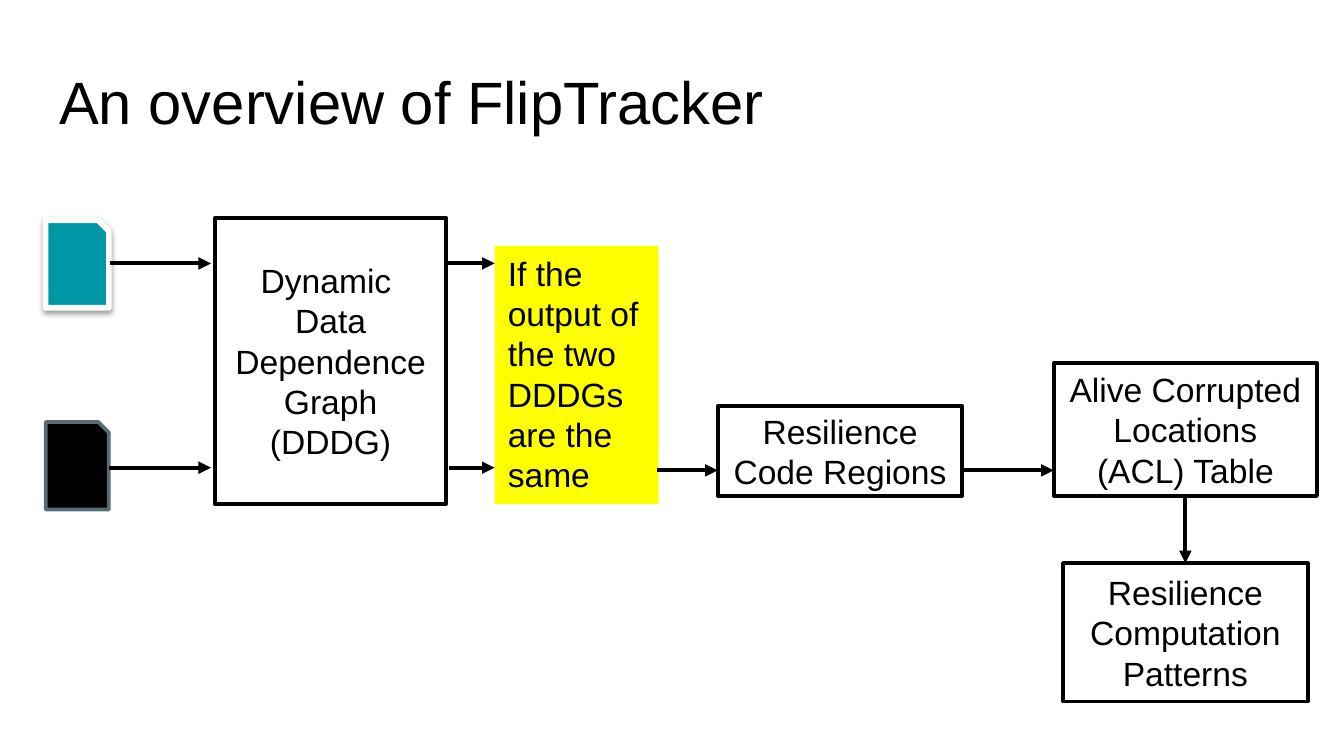
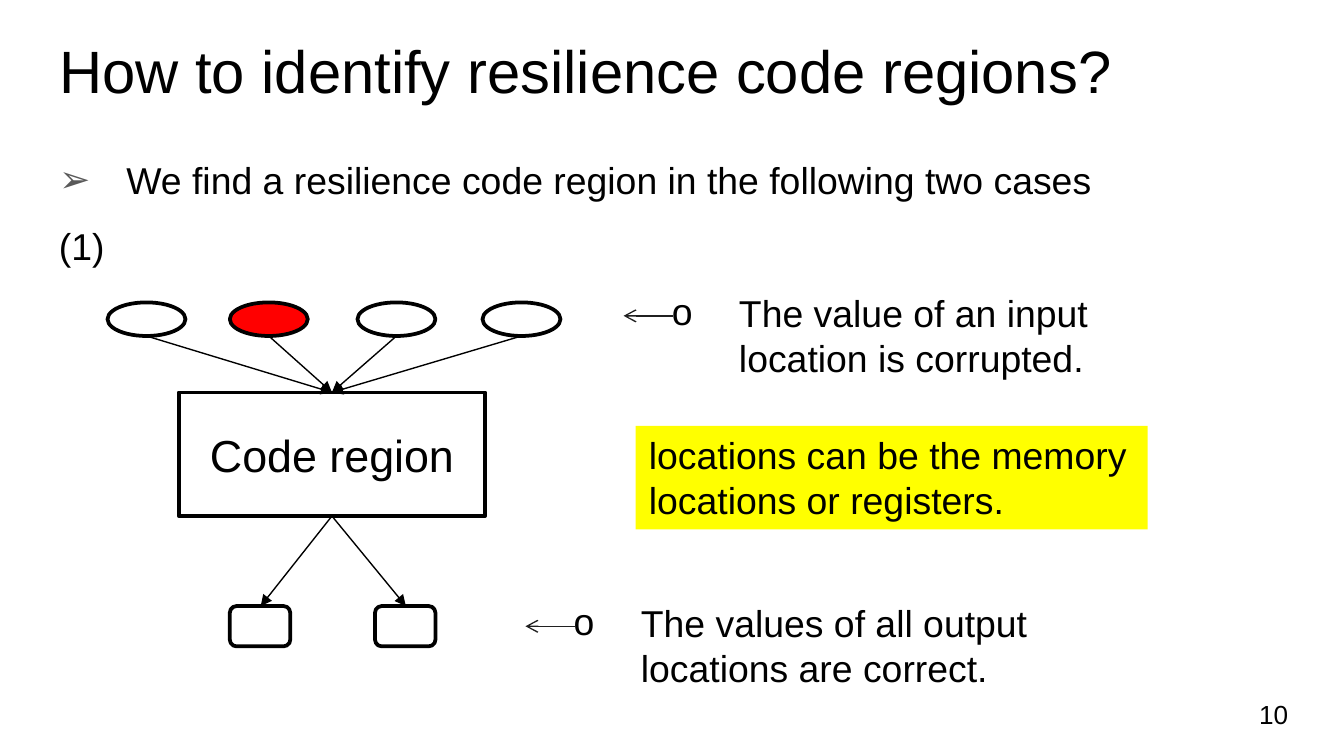
from dataclasses import dataclass

from lxml.etree import SubElement
from pptx import Presentation
from pptx.dml.color import RGBColor
from pptx.enum.shapes import MSO_CONNECTOR as Connector, MSO_SHAPE as Shape
from pptx.enum.text import MSO_ANCHOR as Anchor, MSO_AUTO_SIZE as AutoSize, PP_ALIGN as Align
from pptx.oxml.ns import qn
from pptx.util import Emu, Pt

SCALE = 9144


@dataclass(frozen=True)
class Theme:
    """Colours, font, type sizes and line widths of the deck."""
    font: str = "Arial"
    ink: str = "000000"
    paper: str = "FFFFFF"
    highlight: str = "FFFF00"
    corrupted: str = "FF0000"
    teal: str = "0097A7"
    slate: str = "596B73"
    bullet: str = "595959"
    pointer: str = "202020"
    title: int = 32
    region: int = 24
    body: int = 20
    flow: int = 18
    number: int = 14
    border: float = 2
    flow_arrow: float = 2.25
    thin_arrow: float = 0.75


@dataclass(frozen=True)
class Box:
    """A rectangle in px."""
    x: int
    y: int
    w: int
    h: int

    def inner(self, x, y, w, h):
        """Return a box placed relative to this one."""
        return Box(self.x + x, self.y + y, w, h)

    def emu(self):
        """Return left, top, width and height in EMU."""
        return [px(v) for v in (self.x, self.y, self.w, self.h)]


THEME = Theme()


def px(value):
    """Turn px into EMU."""
    return Emu(value * SCALE)


def rgb(colour):
    """Turn a hex string into a colour."""
    return RGBColor.from_string(colour)


def write(holder, text, size, align=Align.LEFT, anchor=Anchor.TOP,
          inset=(10, 5), wrap=True, fit=AutoSize.NONE):
    """Put text into a holder and format it."""
    frame = holder.text_frame
    frame.text = text
    frame.word_wrap = wrap
    frame.auto_size = fit
    frame.vertical_anchor = anchor
    frame.margin_left = frame.margin_right = px(inset[0])
    frame.margin_top = frame.margin_bottom = px(inset[1])
    for paragraph in frame.paragraphs:
        paragraph.alignment = align
        paragraph.space_before = Pt(0)
        for run in paragraph.runs:
            run.font.name = THEME.font
            run.font.size = Pt(size)
            run.font.color.rgb = rgb(THEME.ink)


def place(holder, box):
    """Move a placeholder to a box."""
    holder.left, holder.top, holder.width, holder.height = box.emu()


def add_bullet(paragraph, mark, colour=None):
    """Give a paragraph a hanging bullet."""
    props = paragraph._p.get_or_add_pPr()
    props.set("marL", str(px(50)))
    props.set("indent", str(px(-50)))
    if colour:
        SubElement(SubElement(props, qn("a:buClr")), qn("a:srgbClr"), val=colour)
    SubElement(props, qn("a:buFont"), typeface=THEME.font)
    SubElement(props, qn("a:buChar"), char=mark)


def add_figure(slide, kind, box, fill=None, line=THEME.ink, width=THEME.border):
    """Add a preset shape without shadow."""
    figure = slide.shapes.add_shape(kind, *box.emu())
    figure.shadow.inherit = False
    if fill:
        figure.fill.solid()
        figure.fill.fore_color.rgb = rgb(fill)
    else:
        figure.fill.background()
    if line:
        figure.line.color.rgb = rgb(line)
        figure.line.width = Pt(width)
    else:
        figure.line.fill.background()
    return figure


def add_step(slide, box, text, size=THEME.flow, fill=None):
    """Add a bordered box with centred text."""
    step = add_figure(slide, Shape.RECTANGLE, box, fill)
    write(step, text, size, Align.CENTER, Anchor.MIDDLE)


def add_highlight(slide, box, text, size):
    """Add a yellow remark."""
    remark = add_figure(slide, Shape.RECTANGLE, box, THEME.highlight, None)
    write(remark, text, size, fit=AutoSize.SHAPE_TO_FIT_TEXT)


def add_label(slide, box, text, size, **style):
    """Add a text box."""
    label = slide.shapes.add_textbox(*box.emu())
    write(label, text, size, **style)
    return label


def add_arrow(slide, box, start, end, width, colour=THEME.ink, head="triangle"):
    """Add an arrow between two points relative to a box."""
    ends = [px(v) for x, y in (start, end) for v in (box.x + x, box.y + y)]
    arrow = slide.shapes.add_connector(Connector.STRAIGHT, *ends)
    arrow.line.color.rgb = rgb(colour)
    arrow.line.width = Pt(width)
    SubElement(arrow.line._get_or_add_ln(), qn("a:tailEnd"), type=head)
    SubElement(arrow._element.spPr, qn("a:effectLst"))


def add_soft_shadow(figure):
    """Give a shape a soft shadow below it."""
    effects = figure._element.spPr.find(qn("a:effectLst"))
    shadow = SubElement(effects, qn("a:outerShdw"), blurRad=str(Pt(3.1)),
                        dist=str(Pt(1.6)), dir="5400000", rotWithShape="0")
    tint = SubElement(shadow, qn("a:srgbClr"), val=THEME.ink)
    SubElement(tint, qn("a:alpha"), val="38000")


def add_titled_slide(deck, layout, title, box):
    """Add a slide with its title placed in a box."""
    slide = deck.slides.add_slide(deck.slide_layouts[layout])
    place(slide.shapes.title, box)
    write(slide.shapes.title, title, THEME.title, inset=(10, 10))
    return slide


def draw_pipeline(slide, box):
    """Draw the flow from the two traces to the patterns."""
    add_figure(slide, Shape.SNIP_1_RECTANGLE, box.inner(0, 152, 47, 65),
               THEME.ink, THEME.slate)
    clean_trace = add_figure(slide, Shape.SNIP_1_RECTANGLE, box.inner(0, 2, 47, 65),
                             THEME.teal, THEME.paper, 3)
    add_soft_shadow(clean_trace)
    add_step(slide, box.inner(126, 0, 172, 213),
             "Dynamic \nData\nDependence\nGraph\n(DDDG)", fill=THEME.paper)
    add_highlight(slide, box.inner(334, 21, 122, 192),
                  "If the output of the two DDDGs are the same", THEME.flow)
    steps = (
        ((500, 140, 182, 67), "Resilience Code Regions"),
        ((750, 108, 196, 99), "Alive Corrupted Locations (ACL) Table"),
        ((757, 257, 182, 103), "Resilience Computation Patterns"),
    )
    for area, text in steps:
        add_step(slide, box.inner(*area), text)
    links = (
        ((48, 34), (123, 34)), ((47, 186), (123, 186)),
        ((297, 34), (334, 34)), ((300, 186), (334, 186)),
        ((455, 188), (500, 188)), ((682, 188), (750, 188)),
        ((848, 207), (848, 257)),
    )
    for start, end in links:
        add_arrow(slide, box, start, end, THEME.flow_arrow)


def draw_code_region(slide, box):
    """Draw the code region with its inputs and outputs."""
    hub = 167
    add_step(slide, box.inner(53, 67, 228, 92), "Code region", THEME.region, THEME.paper)
    inputs = ((0, THEME.paper), (91, THEME.corrupted), (186, THEME.paper), (279, THEME.paper))
    for x, fill in inputs:
        add_figure(slide, Shape.OVAL, box.inner(x, 0, 58, 25), fill)
        add_arrow(slide, box, (x + 29, 25), (hub, 67), THEME.thin_arrow)
    for x in (91, 199):
        add_figure(slide, Shape.ROUNDED_RECTANGLE, box.inner(x, 226, 45, 30), THEME.paper)
        add_arrow(slide, box, (hub, 159), (x + 23, 226), THEME.thin_arrow)


def draw_notes(slide, box):
    """Write the conditions on inputs and outputs beside the diagram."""
    notes = (
        ((99, 0, 348, 77), "The value of an input location is corrupted."),
        ((26, 231, 392, 77), "The values of all output locations are correct."),
    )
    for area, text in notes:
        spot = box.inner(*area)
        note = add_label(slide, spot, text, THEME.body, fit=AutoSize.SHAPE_TO_FIT_TEXT)
        add_bullet(note.text_frame.paragraphs[0], "o")
        add_arrow(slide, spot, (11, 24), (-26, 24), THEME.thin_arrow, THEME.pointer, "arrow")
    add_highlight(slide, box.inner(82, 106, 381, 77),
                  "locations can be the memory locations or registers.", THEME.body)


def build_overview(deck):
    """Build the overview slide."""
    slide = add_titled_slide(deck, 5, "An overview of FlipTracker", Box(34, 38, 932, 63))
    draw_pipeline(slide, Box(34, 162, 946, 360))


def build_identification(deck):
    """Build the slide on finding resilience code regions."""
    slide = add_titled_slide(deck, 1, "How to identify resilience code regions?",
                             Box(34, 15, 911, 63))
    lead = slide.placeholders[1]
    place(lead, Box(34, 102, 900, 65))
    write(lead, "We find a resilience code region in the following two cases",
          THEME.body, inset=(10, 10))
    claim = lead.text_frame.paragraphs[0]
    claim.line_spacing = 1.15
    claim.space_after = Pt(16)
    add_bullet(claim, "➢", THEME.bullet)
    add_label(slide, Box(34, 161, 54, 44), "(1)", THEME.body,
              wrap=False, fit=AutoSize.SHAPE_TO_FIT_TEXT)
    draw_code_region(slide, Box(80, 225, 337, 256))
    draw_notes(slide, Box(391, 211, 463, 308))
    add_label(slide, Box(927, 510, 60, 43), "10", THEME.number,
              anchor=Anchor.MIDDLE, inset=(10, 10))


def main():
    """Build and save the deck."""
    deck = Presentation()
    deck.slide_width = px(1000)
    deck.slide_height = Emu(deck.slide_width * 9 // 16)
    build_overview(deck)
    build_identification(deck)
    deck.save("out.pptx")


if __name__ == "__main__":
    main()
